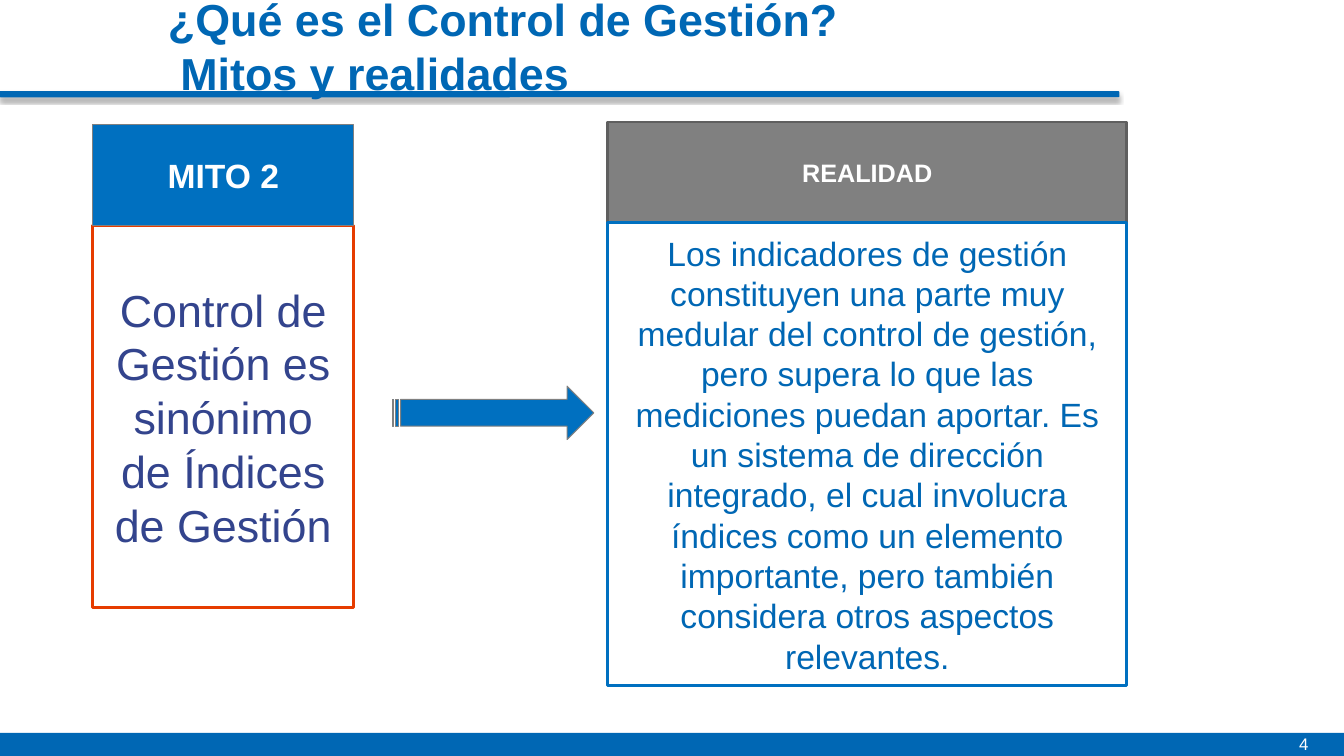
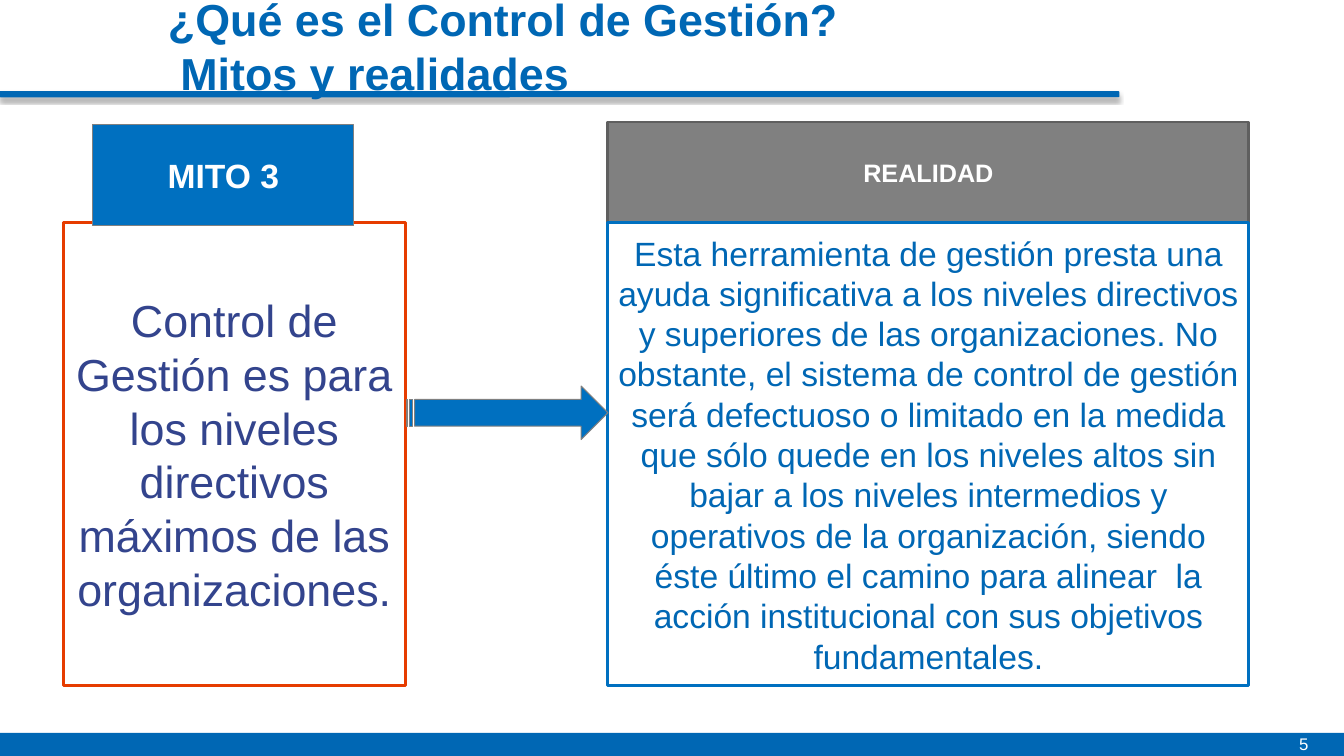
from lxml import etree
from pptx import Presentation
from pptx.dml.color import RGBColor
from pptx.enum.shapes import MSO_SHAPE as SHAPE
from pptx.enum.text import MSO_ANCHOR as ANCHOR, MSO_AUTO_SIZE as AUTO, PP_ALIGN as ALIGN
from pptx.oxml.ns import nsdecls
from pptx.util import Inches, Pt

BRAND = RGBColor(0x00, 0x67, 0xB4)
BLUE = RGBColor(0x00, 0x70, 0xC0)
INDIGO = RGBColor(0x33, 0x44, 0x8D)
ORANGE = RGBColor(0xE6, 0x3C, 0x00)
GRAY = RGBColor(0x80, 0x80, 0x80)
DARK_GRAY = RGBColor(0x5F, 0x5F, 0x5F)
WHITE = RGBColor(0xFF, 0xFF, 0xFF)

FONT = "Arial"
TITLE = "¿Qué es el Control de Gestión?\v Mitos y realidades"

# Boxes are left, top, width, height in percent of the slide.
BAND_HEIGHT = 13.33
REALITY_LEFT, REALITY_TOP = 45.23, 16.13
REALITY_BODY_TOP, REALITY_BODY_HEIGHT = 29.47, 61.2
MYTH_LABEL = (6.9, 16.53, 19.43, BAND_HEIGHT)

SOFT_SHADOW = (
    f'<a:outerShdw {nsdecls("a")} blurRad="{Pt(3.1)}" dist="{Pt(1.8)}" dir="5400000" '
    'algn="t" rotWithShape="0"><a:srgbClr val="000000"><a:alpha val="35000"/>'
    '</a:srgbClr></a:outerShdw>'
)

MYTHS = [
    dict(
        number=2,
        myth="Control de Gestión es sinónimo de Índices de Gestión",
        myth_box=(6.9, 29.87, 19.43, 50.53),
        arrow_left=29.18,
        reality="Los indicadores de gestión constituyen una parte muy medular del "
                "control de gestión, pero supera lo que las mediciones puedan aportar. "
                "Es un sistema de dirección integrado, el cual involucra índices como "
                "un elemento importante, pero también considera otros aspectos relevantes.",
        reality_width=38.6,
    ),
    dict(
        number=3,
        myth="Control de Gestión es para los niveles directivos máximos de las "
             "organizaciones.",
        myth_box=(4.73, REALITY_BODY_TOP, 25.43, REALITY_BODY_HEIGHT),
        arrow_left=30.23,
        reality="Esta herramienta de gestión presta una ayuda significativa a los "
                "niveles directivos y superiores de las organizaciones. No obstante, "
                "el sistema de control de gestión será defectuoso o limitado en la "
                "medida que sólo quede en los niveles altos sin bajar a los niveles "
                "intermedios y operativos de la organización, siendo éste último el "
                "camino para alinear  la acción institucional con sus objetivos "
                "fundamentales.",
        reality_width=47.7,
    ),
]


class Deck:
    def __init__(self):
        self.prs = Presentation()
        self.prs.slide_width, self.prs.slide_height = Inches(13.33), Inches(7.5)
        self.slide = None

    def place(self, box):
        """Turn a box in percent of the slide into lengths."""
        sides = (self.prs.slide_width, self.prs.slide_height) * 2
        return [round(share * side / 100) for share, side in zip(box, sides)]

    def set_text(self, sp, text, size, color, bold=False, align=ALIGN.CENTER,
                 anchor=ANCHOR.MIDDLE):
        tf = sp.text_frame
        tf.text = text
        tf.word_wrap = True
        tf.auto_size = AUTO.NONE
        tf.vertical_anchor = anchor
        p = tf.paragraphs[0]
        p.alignment = align
        for r in p.runs:
            r.font.name, r.font.size, r.font.bold = FONT, Pt(size), bold
            r.font.color.rgb = color

    def shape(self, box, fill, line=None, width=0.75, kind=SHAPE.RECTANGLE):
        sp = self.slide.shapes.add_shape(kind, *self.place(box))
        sp.shadow.inherit = False
        sp.fill.solid()
        sp.fill.fore_color.rgb = fill
        if line is None:
            sp.line.fill.background()
        else:
            sp.line.color.rgb = line
            sp.line.width = Pt(width)
        return sp

    def title(self, text):
        sp = self.slide.shapes.title
        sp.left, sp.top, sp.width, sp.height = self.place((12.5, -1.2, 75, 14.4))
        tf = sp.text_frame
        tf.margin_left = tf.margin_top = tf.margin_right = tf.margin_bottom = 0
        self.set_text(sp, text, 32, BRAND, True, ALIGN.LEFT, ANCHOR.BOTTOM)
        sp.element.getparent().append(sp.element)  # bring to front

    def page_number(self, number):
        sp = self.slide.shapes.add_textbox(*self.place((95.93, 96.4, 4.07, 3.6)))
        self.set_text(sp, str(number), 12, WHITE, align=ALIGN.LEFT, anchor=ANCHOR.TOP)

    def new_slide(self, title, number):
        self.slide = self.prs.slides.add_slide(self.prs.slide_layouts[5])
        rule = self.shape((0, 12.13, 83.25, 0.67), BRAND, BRAND,
                          kind=SHAPE.ROUNDED_RECTANGLE)
        rule.adjustments[0] = 0.12
        effects = rule.element.spPr.find("{*}effectLst")
        effects.append(etree.fromstring(SOFT_SHADOW))
        self.shape((0, 96.93, 100, 3.07), BRAND)
        self.title(title)
        self.page_number(number)

    def panel(self, box, text, size, color, fill, line, width=2, bold=False):
        sp = self.shape(box, fill, line, width)
        self.set_text(sp, text, size, color, bold)

    def arrow(self, left):
        self.shape((left, 51.07, 15, 7.07), BLUE, GRAY,
                   kind=SHAPE.STRIPED_RIGHT_ARROW)

    def myth_slide(self, number, myth, myth_box, arrow_left, reality, reality_width):
        self.new_slide(TITLE, number + 2)
        self.panel(myth_box, myth, 32, INDIGO, WHITE, ORANGE)
        self.panel(MYTH_LABEL, f"MITO {number}", 24, WHITE, BLUE, GRAY, 0.75, True)
        self.panel((REALITY_LEFT, REALITY_TOP, reality_width, BAND_HEIGHT),
                   "REALIDAD", 18, WHITE, GRAY, DARK_GRAY, bold=True)
        self.panel((REALITY_LEFT, REALITY_BODY_TOP, reality_width, REALITY_BODY_HEIGHT),
                   reality, 24, BRAND, WHITE, BLUE)
        self.arrow(arrow_left)


def main():
    deck = Deck()
    for myth in MYTHS:
        deck.myth_slide(**myth)
    deck.prs.save("out.pptx")


if __name__ == "__main__":
    main()
